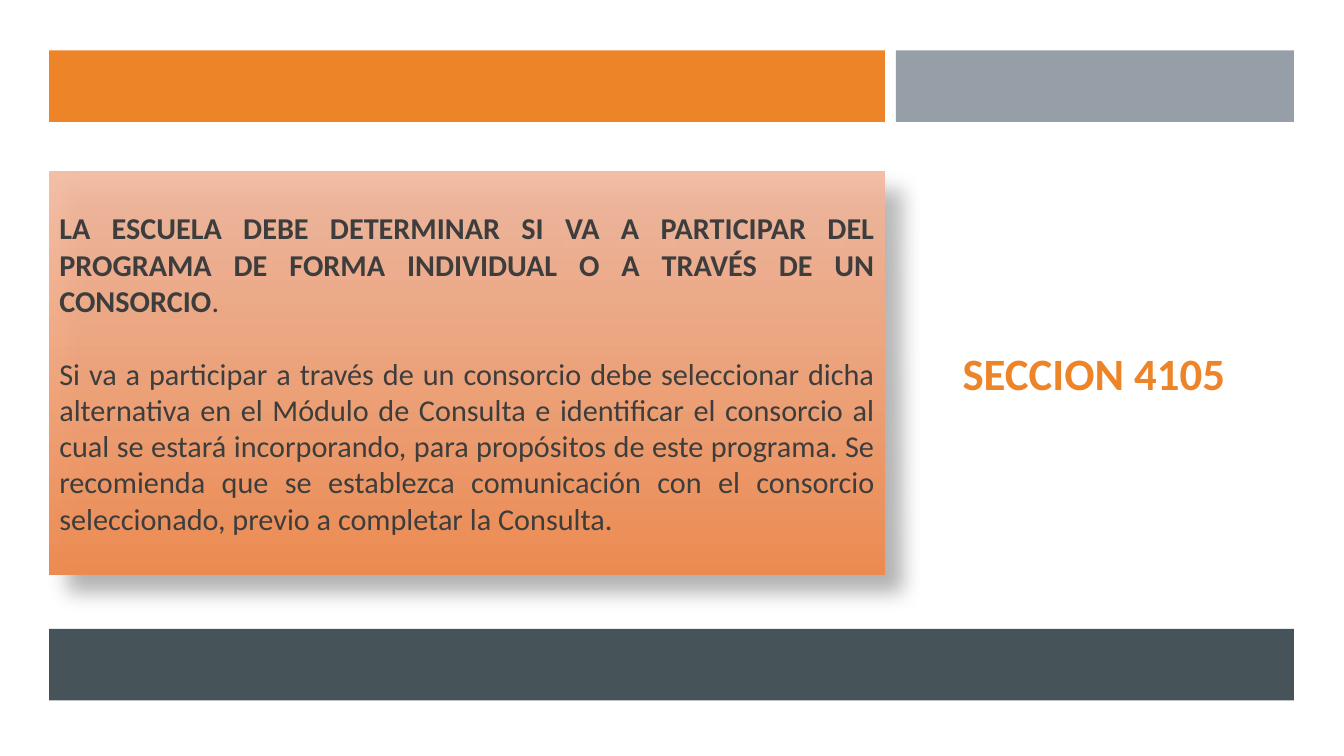
from lxml.etree import SubElement
from pptx import Presentation
from pptx.dml.color import RGBColor
from pptx.enum.shapes import MSO_SHAPE
from pptx.enum.text import MSO_ANCHOR, MSO_AUTO_SIZE, PP_ALIGN
from pptx.oxml.ns import qn
from pptx.util import Cm, Pt

COLORS = {
    "white": "FFFFFF",
    "orange": "ED8428",
    "gray": "969FA7",
    "slate": "465359",
    "ink": "3D3D3D",
    "panel_top": "F3B89D",
    "panel_bottom": "ED8C53",
    "shadow": "000000",
}
FONT = "Calibri"
LEFT, PANEL_WIDTH = 1.24, 21.06
SIDE_LEFT, SIDE_WIDTH = 22.58, 10.03
PANEL_TOP, PANEL_HEIGHT = 4.32, 10.16
BAR_HEIGHT = 1.8
BARS = [
    (LEFT, 1.27, PANEL_WIDTH, "orange"),
    (SIDE_LEFT, 1.27, SIDE_WIDTH, "gray"),
    (LEFT, 15.85, SIDE_LEFT + SIDE_WIDTH - LEFT, "slate"),
]
DECISION = (
    "LA ESCUELA DEBE DETERMINAR SI VA A PARTICIPAR DEL PROGRAMA "
    "DE FORMA INDIVIDUAL O A TRAVÉS DE UN CONSORCIO"
)
GUIDANCE = (
    "Si va a participar a través de un consorcio debe seleccionar dicha "
    "alternativa en el Módulo de Consulta e identificar el consorcio al cual "
    "se estará incorporando, para propósitos de este programa. Se recomienda "
    "que se establezca comunicación con el consorcio seleccionado, previo a "
    "completar la Consulta."
)


def color(name):
    return RGBColor.from_string(COLORS[name])


def place(placeholder, left, width):
    placeholder.left, placeholder.top = Cm(left), Cm(PANEL_TOP)
    placeholder.width, placeholder.height = Cm(width), Cm(PANEL_HEIGHT)
    frame = placeholder.text_frame
    frame.word_wrap = True
    frame.auto_size = MSO_AUTO_SIZE.NONE
    frame.vertical_anchor = MSO_ANCHOR.MIDDLE
    return frame


def format_run(run, size, ink, bold):
    run.font.name = FONT
    run.font.size = Pt(size)
    run.font.bold = bold
    run.font.color.rgb = color(ink)
    run.font._element.set("cap", "none")


def add_bar(slide, left, top, width, fill):
    bar = slide.shapes.add_shape(
        MSO_SHAPE.RECTANGLE, Cm(left), Cm(top), Cm(width), Cm(BAR_HEIGHT)
    )
    bar.shadow.inherit = False
    bar.fill.solid()
    bar.fill.fore_color.rgb = color(fill)
    bar.line.fill.background()


def set_alpha(color_element, percent):
    SubElement(color_element, qn("a:alpha"), val=str(percent * 1000))


def fill_panel(panel):
    panel.fill.gradient()
    panel.fill.gradient_angle = 270
    for stop, name in zip(panel.fill.gradient_stops, ("panel_top", "panel_bottom")):
        stop.color.rgb = color(name)
    properties = panel._element.spPr
    set_alpha(properties.find(".//" + qn("a:srgbClr")), 90)
    effects = SubElement(properties, qn("a:effectLst"))
    shadow = SubElement(
        effects, qn("a:outerShdw"), blurRad=str(Pt(15)), dist=str(Pt(18)),
        dir=str(45 * 60000), algn="tl", rotWithShape="0",
    )
    set_alpha(SubElement(shadow, qn("a:srgbClr"), val=COLORS["shadow"]), 30)


def write_panel(panel):
    frame = place(panel, LEFT, PANEL_WIDTH)
    fill_panel(panel)
    decision = frame.paragraphs[0]
    decision.text = DECISION
    decision.add_run().text = "."
    guidance = frame.add_paragraph()
    guidance.text = GUIDANCE
    guidance.space_before = Pt(26)
    for paragraph in frame.paragraphs:
        paragraph.alignment = PP_ALIGN.JUSTIFY
        for run in paragraph.runs:
            format_run(run, 21.6, "ink", run.text == DECISION)


def write_section(section):
    frame = place(section, 22.53, 10.08)
    frame.text = "SECCION 4105"
    heading = frame.paragraphs[0]
    heading.alignment = PP_ALIGN.CENTER
    heading.space_after = Pt(6)
    format_run(heading.runs[0], 32, "orange", True)


def main():
    presentation = Presentation()
    presentation.slide_width, presentation.slide_height = Cm(33.87), Cm(19.05)
    slide = presentation.slides.add_slide(presentation.slide_layouts[2])
    slide.background.fill.solid()
    slide.background.fill.fore_color.rgb = color("white")
    write_panel(slide.shapes.title)
    write_section(slide.placeholders[1])
    for bar in BARS:
        add_bar(slide, *bar)
    presentation.save("out.pptx")


if __name__ == "__main__":
    main()
